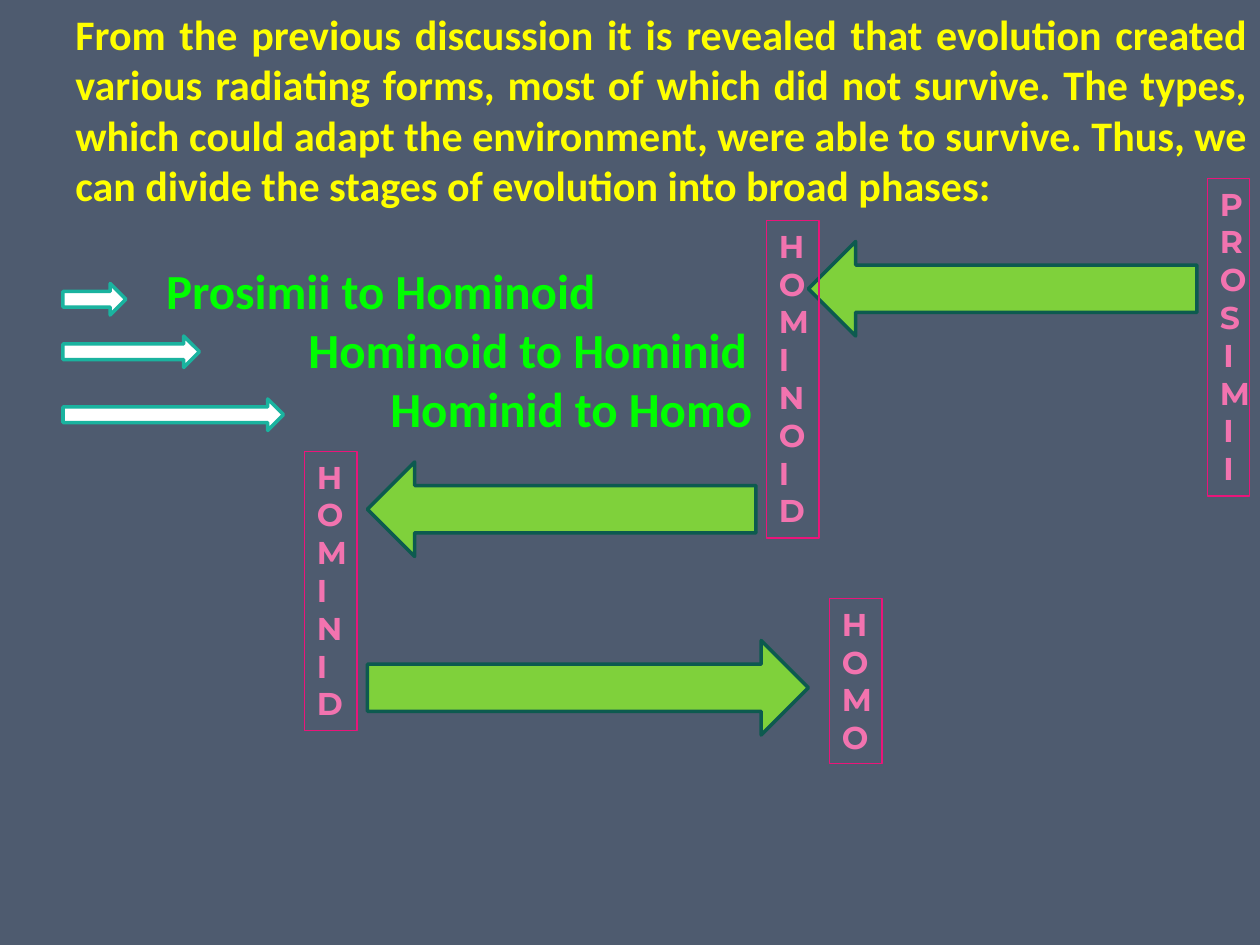
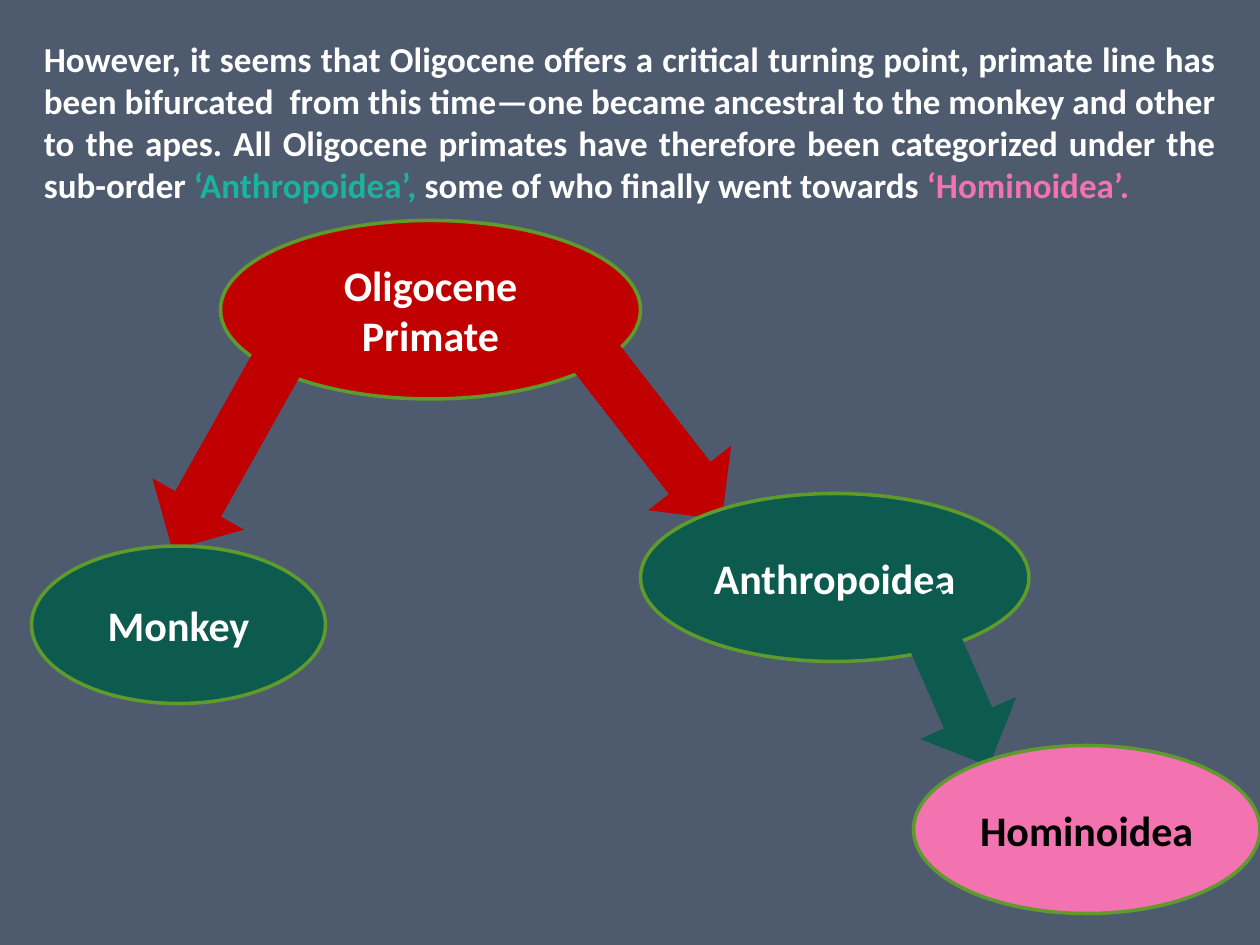
from pptx import Presentation
from pptx.dml.color import RGBColor
from pptx.enum.shapes import MSO_SHAPE
from pptx.enum.text import MSO_ANCHOR, MSO_AUTO_SIZE, PP_ALIGN
from pptx.util import Inches, Pt

SLATE = RGBColor(0x4E, 0x5B, 0x6F)
YELLOW = RGBColor(0xFF, 0xFF, 0x00)
GREEN = RGBColor(0x00, 0xFF, 0x00)
WHITE = RGBColor(0xFF, 0xFF, 0xFF)
BLACK = RGBColor(0x00, 0x00, 0x00)
TEAL = RGBColor(0x1A, 0xB3, 0x9F)
DARK_TEAL = RGBColor(0x0D, 0x5A, 0x4F)
LIME = RGBColor(0x7F, 0xD1, 0x3B)
LEAF = RGBColor(0x5E, 0x9B, 0x2C)
MAGENTA = RGBColor(0xEA, 0x15, 0x7A)
PINK = RGBColor(0xF2, 0x73, 0xAF)
RED = RGBColor(0xC0, 0x00, 0x00)

deck = Presentation()
deck.slide_width, deck.slide_height = Inches(10), Inches(7.5)
COLUMN = deck.slide_width / 120
ROW = deck.slide_height / 90


def add_box(page, kind, left, top, width, height, fill=None, line=None, weight=2):
    place = [round(left * COLUMN), round(top * ROW), round(width * COLUMN), round(height * ROW)]
    if kind is None:
        box = page.shapes.add_textbox(*place)
    else:
        box = page.shapes.add_shape(kind, *place)
        box.shadow.inherit = False
        for part, color in ((box.fill, fill), (box.line.fill, line)):
            if color is None:
                part.background()
            else:
                part.solid()
                part.fore_color.rgb = color
        if line is not None:
            box.line.width = Pt(weight)
    box.text_frame.word_wrap = True
    return box


def write(para, spans, size, align, font="Calibri"):
    para.alignment = align
    for text, color in spans:
        span = para.add_run()
        span.text = text
        span.font.color.rgb = color
        for name, value in {"name": font, "size": Pt(size), "bold": True}.items():
            setattr(span.font, name, value)


pages = []
for number in range(2):
    page = deck.slides.add_slide(deck.slide_layouts[6])
    page.background.fill.solid()
    page.background.fill.fore_color.rgb = SLATE
    pages.append(page)
phases_page, branches_page = pages

intro = add_box(phases_page, None, 6, 0, 114, 42.4).text_frame
intro.vertical_anchor = MSO_ANCHOR.MIDDLE
write(intro.paragraphs[0], [(
    "From the previous discussion it is revealed that evolution created various radiating forms, "
    "most of which did not survive. The types, which could adapt the environment, were able to "
    "survive. Thus, we can divide the stages of evolution into broad phases:", YELLOW)],
    24, PP_ALIGN.JUSTIFY)

phases = [
    ("Prosimii to Hominoid", 0.72, 29, 27, 6),
    ("Hominoid to Hominid", 1.85, 0, 32, 13),
    ("Hominid to Homo", 2.5, 0, 38, 21),
]
for phase, indent, gap, top, length in phases:
    para = intro.add_paragraph()
    write(para, [(phase, GREEN)], 28, PP_ALIGN.JUSTIFY)
    para.space_before = Pt(gap)
    para._p.get_or_add_pPr().set("marL", str(Inches(indent)))
    add_box(phases_page, MSO_SHAPE.RIGHT_ARROW, 6, top, length, 3, WHITE, TEAL)

for kind, left, top, length in [
    (MSO_SHAPE.LEFT_ARROW, 77, 23, 37),
    (MSO_SHAPE.LEFT_ARROW, 35, 44, 37),
    (MSO_SHAPE.RIGHT_ARROW, 35, 61, 42),
]:
    add_box(phases_page, kind, left, top, length, 9, LIME, DARK_TEAL)

for lines, left, top, width, align in [
    (["PROSIMI", "I"], 115, 17, 4, PP_ALIGN.CENTER),
    (["HOMINOID"], 73, 21, 5, PP_ALIGN.LEFT),
    (["HOMINID"], 29, 43, 5, PP_ALIGN.LEFT),
    (["HOMO"], 79, 57, 5, PP_ALIGN.LEFT),
]:
    height = 1.2 + 3.63 * len("".join(lines))
    box = add_box(phases_page, MSO_SHAPE.RECTANGLE, left, top, width, height, None, MAGENTA, 0.75)
    frame = box.text_frame
    frame.auto_size = MSO_AUTO_SIZE.SHAPE_TO_FIT_TEXT
    frame.vertical_anchor = MSO_ANCHOR.TOP
    for index, letters in enumerate(lines):
        para = frame.add_paragraph() if index else frame.paragraphs[0]
        write(para, [(letters, PINK)], 18, align, "Montserrat")

summary = add_box(branches_page, None, 3, 3, 114, 17.4).text_frame
write(summary.paragraphs[0], [
    ("However, it seems that Oligocene offers a critical turning point, primate line has been "
     "bifurcated  from this time—one became ancestral to the monkey and other to the apes. All "
     "Oligocene primates have therefore been categorized under the sub-order ", WHITE),
    ("‘Anthropoidea’, ", TEAL),
    ("some of who finally went towards ", WHITE),
    ("‘Hominoidea’.", PINK),
], 20, PP_ALIGN.JUSTIFY)

branches = [
    ("Oligocene Primate", 21, 21, 40, 17, RED, WHITE,
     [(17.3, 29.9, 24, 29.3), (56.4, 28, 24, 322.2)]),
    ("Anthropoidea", 61, 47, 37, 16, DARK_TEAL, WHITE, [(85.7, 56.2, 17.5, 336.4)]),
    ("Hominoidea", 87, 71, 33, 16, PINK, BLACK, []),
    ("Monkey", 3, 52, 28, 15, DARK_TEAL, WHITE, []),
]
for name, left, top, width, height, fill, ink, arrows in branches:
    oval = add_box(branches_page, MSO_SHAPE.OVAL, left, top, width, height, fill, LEAF)
    oval.text_frame.vertical_anchor = MSO_ANCHOR.MIDDLE
    write(oval.text_frame.paragraphs[0], [(name, ink)], 24, PP_ALIGN.CENTER)
    for arrow_left, arrow_top, length, turn in arrows:
        arrow = add_box(branches_page, MSO_SHAPE.DOWN_ARROW, arrow_left, arrow_top, 10, length, fill)
        arrow.rotation = turn

deck.save("out.pptx")
